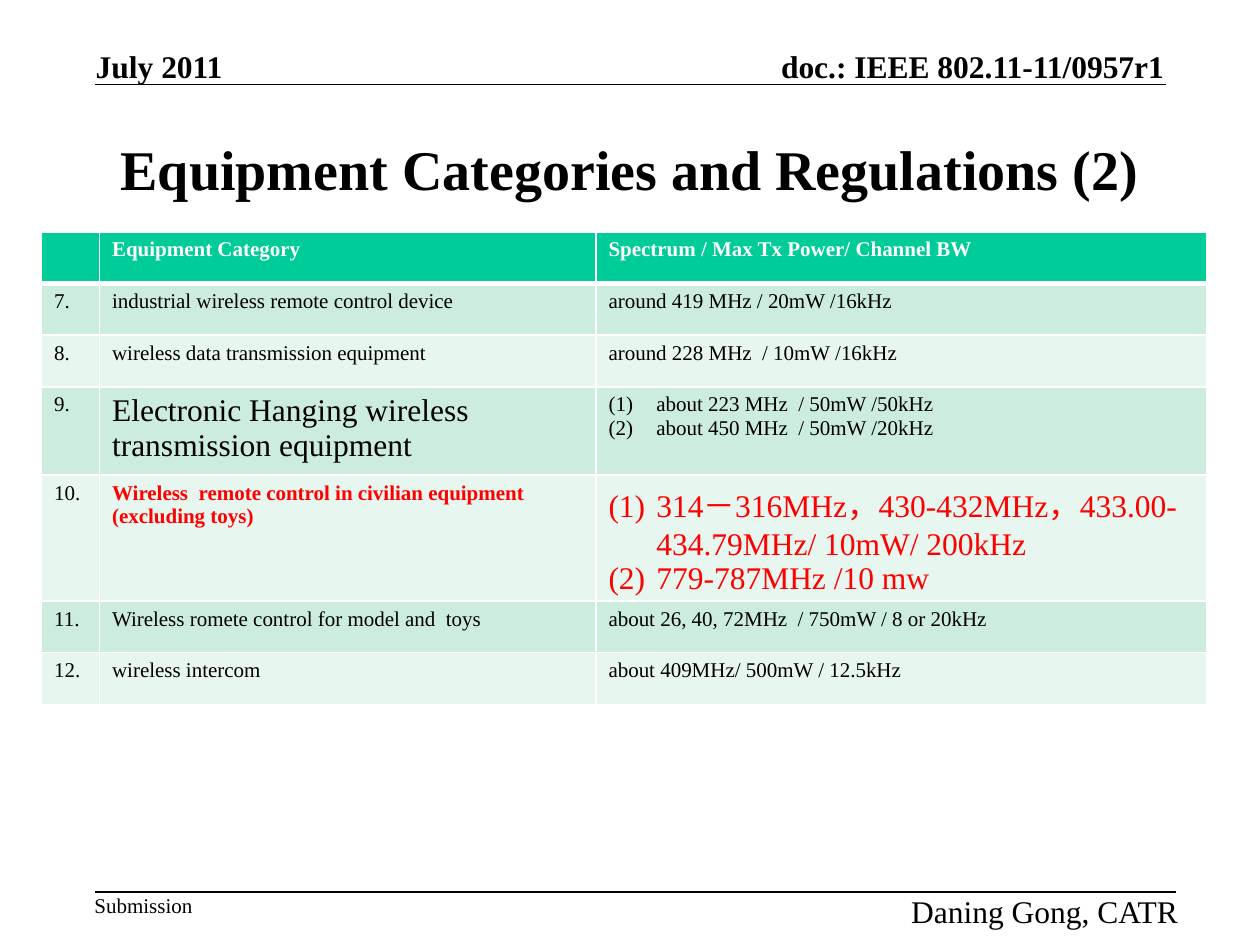
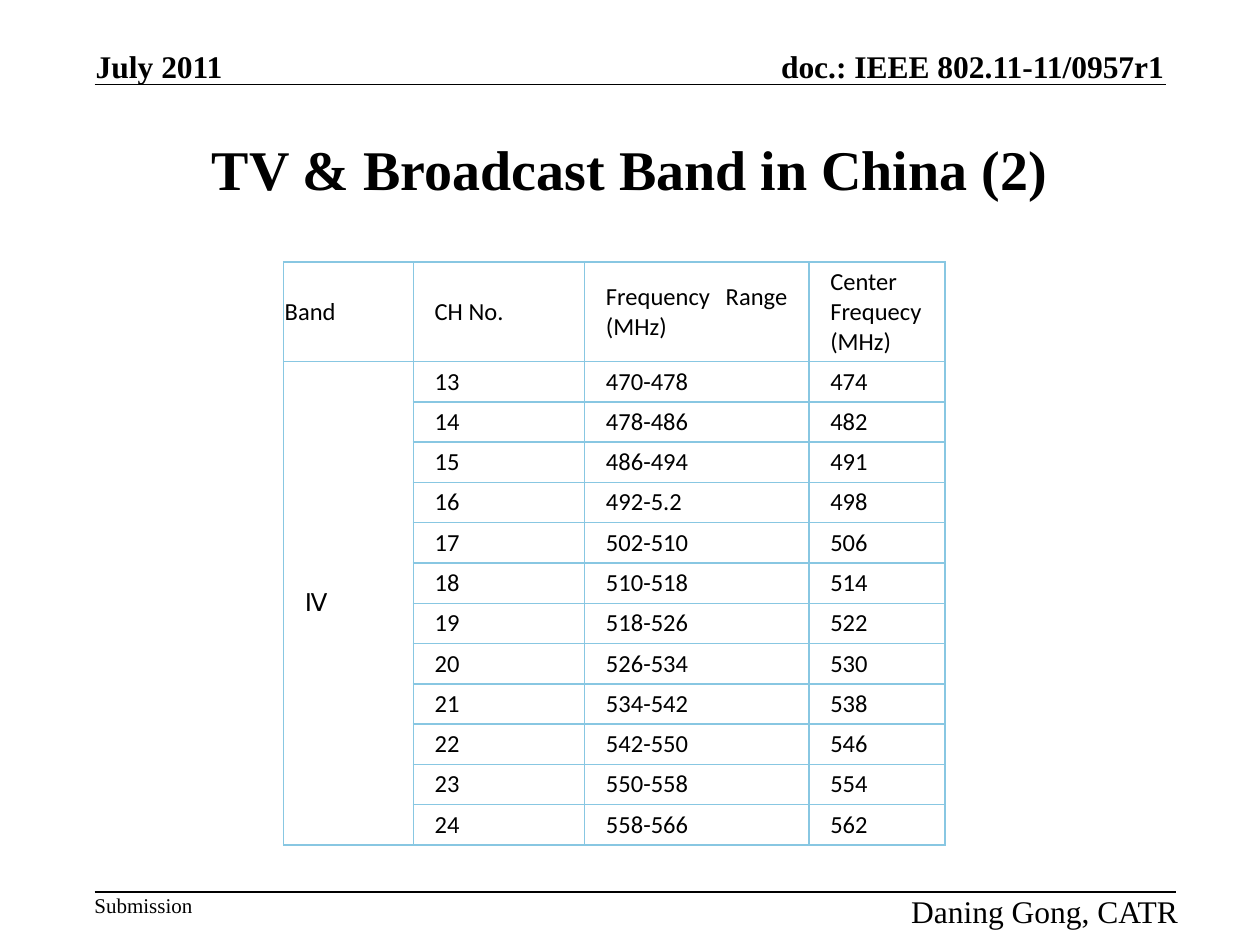
"""Build two slides on radio equipment rules and the TV band in China."""
from lxml.etree import SubElement as Sub
from pptx import Presentation
from pptx.dml.color import RGBColor as RGB
from pptx.enum.shapes import MSO_CONNECTOR as Conn
from pptx.enum.text import MSO_ANCHOR as Anchor, PP_ALIGN as Align
from pptx.oxml.ns import qn
from pptx.util import Inches, Pt

BLACK = RGB(0, 0, 0)
WHITE = RGB(255, 255, 255)
RED = RGB(255, 0, 0)
GREEN = RGB(0x00, 0xCC, 0x99)
BANDS = RGB(0xCC, 0xEC, 0xDE), RGB(0xE7, 0xF6, 0xEF)
BLUE = RGB(0x88, 0xC7, 0xE2)
SERIF, SANS = "Times New Roman", "Calibri"

MARKS = [
    ("doc.: IEEE 802.11-11/0957r1", (5.66, 0.37, 3.58, 0.3),
     dict(size=18, bold=True, align=Align.RIGHT, anchor=Anchor.BOTTOM)),
    ("July 2011", (0.76, 0.37, 1.2, 0.3),
     dict(size=18, bold=True, anchor=Anchor.BOTTOM)),
    ("Submission", (0.75, 7.08, 1, 0.2), dict(size=12)),
    ("Daning Gong, CATR", (6.85, 7.08, 2.5, 0.3),
     dict(size=18, align=Align.RIGHT)),
]
RULES = [(0.75, 9.25, 0.67), (0.75, 9.33, 7.08)]

GEAR = [
    ("", "Equipment Category", "Spectrum / Max Tx Power/ Channel BW"),
    ("7.", "industrial wireless remote control device",
     "around 419 MHz / 20mW /16kHz"),
    ("8.", "wireless data transmission equipment",
     "around 228 MHz  / 10mW /16kHz"),
    ("9.", "Electronic Hanging wireless transmission equipment",
     ["about 223 MHz  / 50mW /50kHz", "about 450 MHz  / 50mW /20kHz"]),
    ("10.", "Wireless  remote control in civilian equipment (excluding toys)",
     ["314－316MHz，430-432MHz，433.00-434.79MHz/ 10mW/ 200kHz",
      "779-787MHz /10 mw"]),
    ("11.", "Wireless romete control for model and  toys",
     "about 26, 40, 72MHz  / 750mW / 8 or 20kHz"),
    ("12.", "wireless intercom", "about 409MHz/ 500mW / 12.5kHz"),
]
GEAR_FORM = {
    (3, 1): dict(size=18),
    (4, 1): dict(color=RED, bold=True),
    (4, 2): dict(color=RED, size=18),
}
GEAR_HIGH = [0.41, 0.41, 0.41, 0.41, 0.76, 0.41, 0.41]

HEADS = ["Band", "CH No.", "Frequency Range (MHz)", "Center Frequecy (MHz)"]
RANGES = ["470-478", "478-486", "486-494", "492-5.2", "502-510", "510-518",
          "518-526", "526-534", "534-542", "542-550", "550-558", "558-566"]
MIDS = [474, 482, 491, 498, 506, 514, 522, 530, 538, 546, 554, 562]
FIRST = 13


def write(frame, text, size=12, bold=False, color=BLACK, font=SERIF,
          align=Align.LEFT):
    """Fill a frame; a list of lines becomes a numbered list."""
    listed = isinstance(text, list)
    for n, line in enumerate(text if listed else [text]):
        para = frame.add_paragraph() if n else frame.paragraphs[0]
        para.alignment = align
        if listed:
            props = para._p.get_or_add_pPr()
            props.set("marL", str(Inches(0.38)))
            props.set("indent", str(-Inches(0.38)))
            Sub(props, qn("a:buAutoNum"), type="arabicParenBoth")
        run = para.add_run()
        run.text = line
        run.font.size, run.font.bold, run.font.name = Pt(size), bold, font
        run.font.color.rgb = color


def put(slide, text, at, anchor=Anchor.TOP, pad=0, **form):
    """Add a text box."""
    frame = slide.shapes.add_textbox(*map(Inches, at)).text_frame
    frame.margin_left = frame.margin_right = Inches(pad)
    frame.margin_top = frame.margin_bottom = Inches(pad / 2)
    frame.word_wrap, frame.vertical_anchor = True, anchor
    write(frame, text, **form)


def frame_page(deck, title):
    """Add a slide with its title, marks and rules."""
    slide = deck.slides.add_slide(deck.slide_layouts[6])
    for text, at, form in MARKS:
        put(slide, text, at, **form)
    for left, right, top in RULES:
        rule = slide.shapes.add_connector(
            Conn.STRAIGHT, *map(Inches, (left, top, right, top)))
        rule.line.color.rgb, rule.line.width = BLACK, Pt(1)
        Sub(rule._element.spPr, qn("a:effectLst"))
    put(slide, title, (0.75, 0.75, 8.5, 1.17), anchor=Anchor.MIDDLE,
        pad=0.1, size=32, bold=True, align=Align.CENTER)
    return slide


def grid(slide, left, top, wide, high):
    """Add a table with the given column widths and row heights."""
    table = slide.shapes.add_table(
        len(high), len(wide),
        *map(Inches, (left, top, sum(wide), sum(high)))).table
    for col, size in zip(table.columns, wide):
        col.width = Inches(size)
    for row, size in zip(table.rows, high):
        row.height = Inches(size)
    return table


def paint(cell, fill, edge, **thick):
    """Draw the four cell borders, then the fill."""
    props = cell._tc.get_or_add_tcPr()
    for side in "LRTB":
        line = Sub(props, qn("a:ln" + side), w=str(Pt(thick.get(side, 1))))
        Sub(Sub(line, qn("a:solidFill")), qn("a:srgbClr"), val=str(edge))
    cell.fill.solid()
    cell.fill.fore_color.rgb = fill


def gear_page(deck):
    """Add the equipment slide."""
    slide = frame_page(deck, "Equipment Categories and Regulations (2)")
    table = grid(slide, 0.33, 1.84, [0.46, 3.94, 4.85], GEAR_HIGH)
    for r, row in enumerate(GEAR):
        fill = BANDS[(r - 1) % 2] if r else GREEN
        base = {} if r else dict(color=WHITE, bold=True)
        thick = {0: dict(B=3), 1: dict(T=3)}.get(r, {})
        for c, text in enumerate(row):
            cell = table.cell(r, c)
            paint(cell, fill, WHITE, **thick)
            if text:
                write(cell.text_frame, text, **GEAR_FORM.get((r, c), base))


def band_page(deck):
    """Add the TV band slide."""
    slide = frame_page(deck, "TV & Broadcast Band in China (2)")
    rows = [HEADS] + [("" if n else "Ⅳ", str(FIRST + n), span, str(mid))
                      for n, (span, mid) in enumerate(zip(RANGES, MIDS))]
    table = grid(slide, 2.25, 2.08, [1.03, 1.36, 1.78, 1.08],
                 [0.79] + [0.32] * len(RANGES))
    for r, row in enumerate(rows):
        for c, text in enumerate(row):
            cell = table.cell(r, c)
            side, edge = (0.17, 0.04) if r or c else (0.01, 0.01)
            cell.margin_left = cell.margin_right = Inches(side)
            cell.margin_top = cell.margin_bottom = Inches(edge)
            cell.vertical_anchor = Anchor.MIDDLE
            paint(cell, WHITE, BLUE)
            if text:
                write(cell.text_frame, text, size=14, font=SANS,
                      align=Align.JUSTIFY)
    table.cell(1, 0).merge(table.cell(len(RANGES), 0))


def main():
    """Build and save the deck."""
    deck = Presentation()
    deck.slide_width, deck.slide_height = Inches(10), Inches(7.5)
    gear_page(deck)
    band_page(deck)
    deck.save("out.pptx")


if __name__ == "__main__":
    main()
